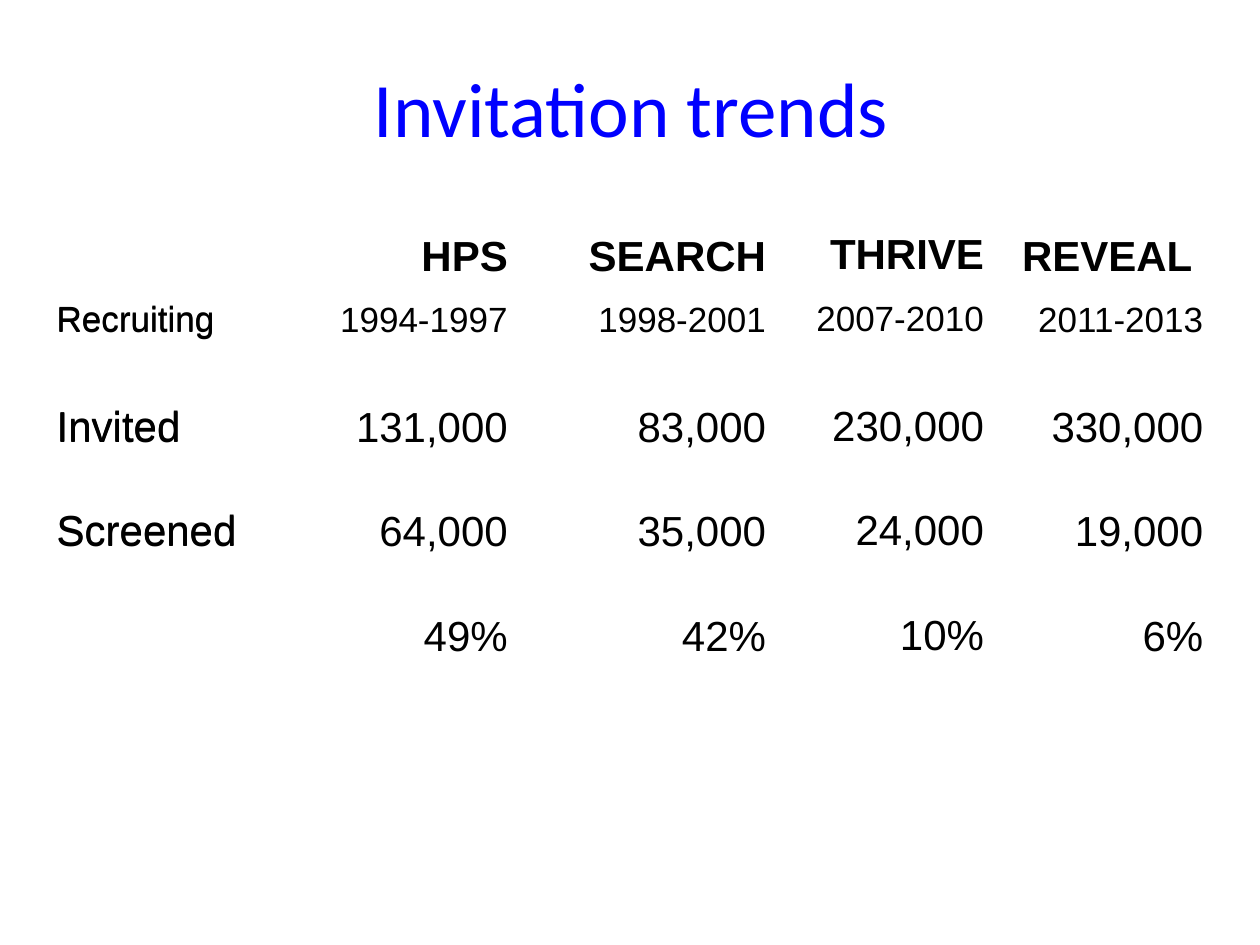
import pptx
import pptx.dml.color
import pptx.enum.text
import pptx.util

Inches = pptx.util.Inches
Pt = pptx.util.Pt
COLORS = {"title": "0000FF", "text": "000000"}

presentation = pptx.Presentation()
presentation.slide_width = Inches(10)
presentation.slide_height = Inches(7.5)
slide = presentation.slides.add_slide(presentation.slide_layouts[6])


def add_text(paragraph, text, size, font, color, alignment, bold=False):
    paragraph.alignment = alignment
    run = paragraph.add_run()
    run.text = text
    run.font.size = Pt(size)
    run.font.name = font
    run.font.bold = bold
    run.font.color.rgb = pptx.dml.color.RGBColor.from_string(COLORS[color])


# Title
title = slide.shapes.add_textbox(Inches(0.51), Inches(0.38), Inches(9), Inches(0.93))
title.text_frame.word_wrap = True
title.text_frame.vertical_anchor = pptx.enum.text.MSO_ANCHOR.MIDDLE
add_text(title.text_frame.paragraphs[0], "Invitation trends", 44, "Calibri", "title",
         pptx.enum.text.PP_ALIGN.CENTER)

# Trial figures, one row per measure
trial_rows = [
    ["", "HPS", "SEARCH", "THRIVE", "REVEAL "],
    ["Recruiting", "1994-1997", "1998-2001", "2007-2010", "2011-2013"],
    ["Invited", "131,000", "83,000", "230,000", "330,000"],
    ["Screened", "64,000", "35,000", "24,000", "19,000"],
    ["", "49%", "42%", "10%", "6%"],
]
column_widths = [2.13, 1.65, 2.05, 1.73, 1.7]
row_heights = [0.54] + [0.82] + [0.83] * 3
row_sizes = [24, 20, 24, 24, 24]

# Overlaid tables on the same grid: left, top and the columns each one fills
table_layers = [(0.35, 1.79, {0, 3}), (0.35, 1.8, {0, 1, 2}), (0.39, 1.8, {4})]

for left, top, filled_columns in table_layers:
    table = slide.shapes.add_table(
        len(row_heights), len(column_widths), Inches(left), Inches(top),
        Inches(sum(column_widths)), Inches(sum(row_heights))).table
    table.first_row = False
    table.horz_banding = False
    for column, width in zip(table.columns, column_widths):
        column.width = Inches(width)
    for row, height in zip(table.rows, row_heights):
        row.height = Inches(height)

    for row_index, values in enumerate(trial_rows):
        for column_index, value in enumerate(values):
            cell = table.cell(row_index, column_index)
            cell.fill.background()
            if value and column_index in filled_columns:
                alignment = (pptx.enum.text.PP_ALIGN.RIGHT if column_index
                             else pptx.enum.text.PP_ALIGN.LEFT)
                add_text(cell.text_frame.paragraphs[0], value, row_sizes[row_index],
                         "Arial", "text", alignment, bold=row_index == 0)

presentation.save("out.pptx")
